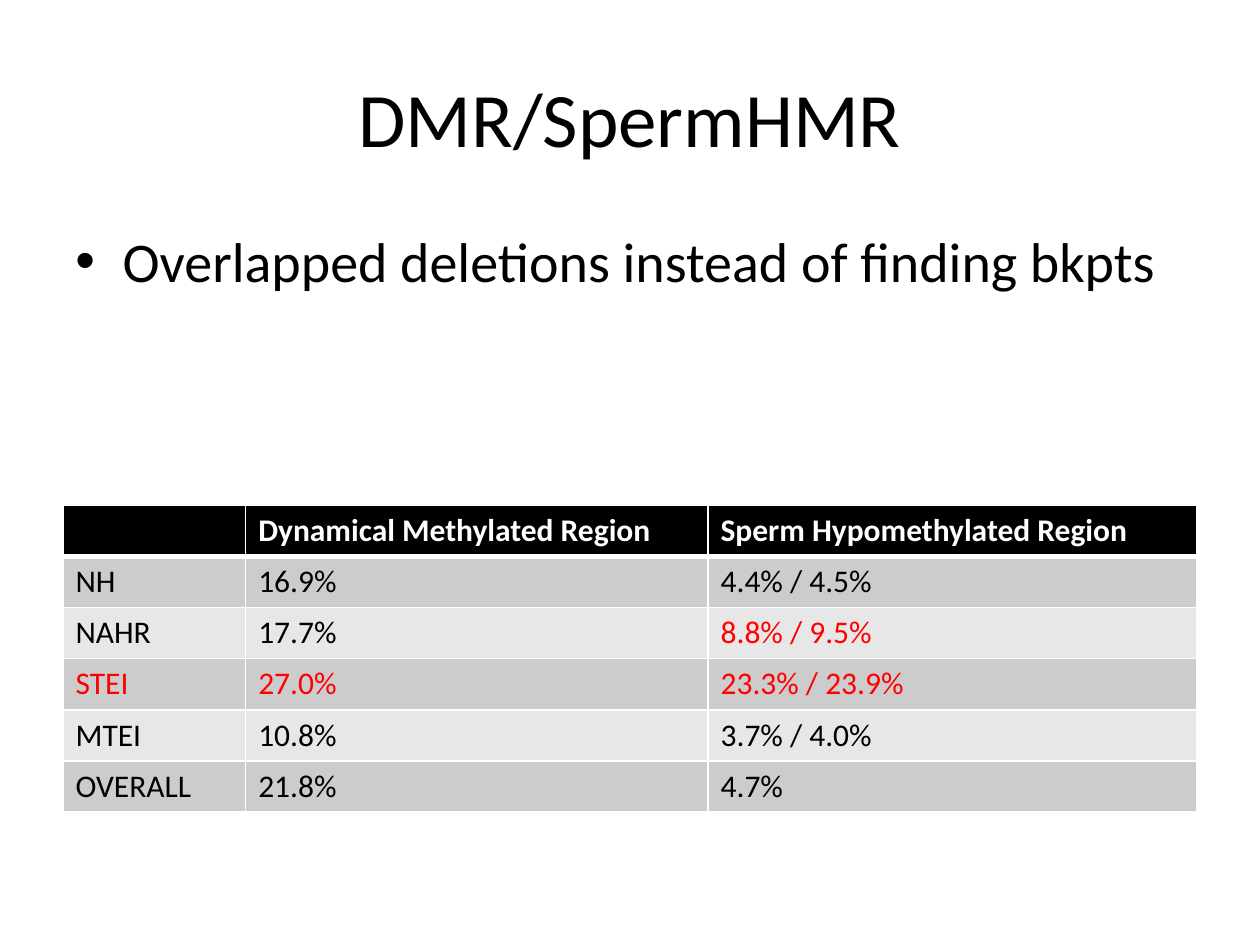
from typing import NamedTuple

from lxml.etree import SubElement
from pptx import Presentation
from pptx.dml.color import RGBColor
from pptx.enum.text import MSO_ANCHOR as Anchor, PP_ALIGN as Align
from pptx.oxml.ns import qn
from pptx.util import Pt

FONT = "Calibri"
COLORS = {
    "text": "000000",
    "header": "000000",
    "inverse": "FFFFFF",
    "highlight": "FF0000",
    "band_dark": "CCCCCC",
    "band_light": "E7E7E7",
    "grid": "FFFFFF",
}
LEFT, WIDTH = 36, 648
TABLE_TOP, ROW_HEIGHT = 288.8, 29.2
COLUMN_WIDTHS = (104.4, 264.2, 279.4)
HEADINGS = ("", "Dynamical Methylated Region", "Sperm Hypomethylated Region")


class Mechanism(NamedTuple):
    name: str
    methylated: str
    hypomethylated: str
    highlighted: tuple[int, ...] = ()


MECHANISMS = (
    Mechanism("NH", "16.9%", "4.4% / 4.5%"),
    Mechanism("NAHR", "17.7%", "8.8% / 9.5%", (2,)),
    Mechanism("STEI", "27.0%", "23.3% / 23.9%", (0, 1, 2)),
    Mechanism("MTEI", "10.8%", "3.7% / 4.0%"),
    Mechanism("OVERALL", "21.8%", "4.7%"),
)


def rgb(color: str) -> RGBColor:
    return RGBColor.from_string(COLORS[color])


def style(paragraph, size: float, color: str = "text", bold: bool = False) -> None:
    font = paragraph.font
    font.name, font.size, font.bold = FONT, Pt(size), bold
    font.color.rgb = rgb(color)


def add_text(slide, top: float, height: float, text: str, size: float, anchor):
    """Add a full-width text box and return its paragraph."""
    frame = slide.shapes.add_textbox(Pt(LEFT), Pt(top), Pt(WIDTH), Pt(height)).text_frame
    frame.word_wrap = True
    frame.vertical_anchor = anchor
    paragraph = frame.paragraphs[0]
    paragraph.text = text
    style(paragraph, size)
    return paragraph


def add_bullet(paragraph, indent: float) -> None:
    properties = paragraph._p.get_or_add_pPr()
    properties.set("marL", str(Pt(indent)))
    properties.set("indent", str(-Pt(indent)))
    SubElement(properties, qn("a:buFont"), typeface="Arial")
    SubElement(properties, qn("a:buChar"), char="•")


def set_borders(cell, top: float = 1, bottom: float = 1) -> None:
    """Draw all four grid lines; must run before the cell's fill is set."""
    properties = cell._tc.get_or_add_tcPr()
    for side, width in (("L", 1), ("R", 1), ("T", top), ("B", bottom)):
        line = SubElement(properties, qn(f"a:ln{side}"), w=str(Pt(width)))
        SubElement(SubElement(line, qn("a:solidFill")), qn("a:srgbClr"), val=COLORS["grid"])


def fill_cell(cell, text: str, fill: str, color: str, bold: bool = False) -> None:
    cell.fill.solid()
    cell.fill.fore_color.rgb = rgb(fill)
    cell.text = text
    style(cell.text_frame.paragraphs[0], 18, color, bold)


def add_overlap_table(slide) -> None:
    row_count = len(MECHANISMS) + 1
    table = slide.shapes.add_table(
        row_count, len(HEADINGS), Pt(LEFT), Pt(TABLE_TOP), Pt(WIDTH), Pt(ROW_HEIGHT * row_count)
    ).table
    for column, width in zip(table.columns, COLUMN_WIDTHS):
        column.width = Pt(width)
    for row in table.rows:
        row.height = Pt(ROW_HEIGHT)

    for col, heading in enumerate(HEADINGS):
        cell = table.cell(0, col)
        set_borders(cell, bottom=3)
        fill_cell(cell, heading, "header", "inverse", bold=True)
    for row, mechanism in enumerate(MECHANISMS, start=1):
        band = "band_dark" if row % 2 else "band_light"
        for col, value in enumerate(mechanism[:3]):
            cell = table.cell(row, col)
            set_borders(cell, top=3 if row == 1 else 1)
            color = "highlight" if col in mechanism.highlighted else "text"
            fill_cell(cell, value, band, color)


def main() -> None:
    presentation = Presentation()
    presentation.slide_width, presentation.slide_height = Pt(720), Pt(540)
    slide = presentation.slides.add_slide(presentation.slide_layouts[6])

    title = add_text(slide, 21.6, 90, "DMR/SpermHMR", 44, Anchor.MIDDLE)
    title.alignment = Align.CENTER
    add_overlap_table(slide)
    method = add_text(
        slide, 126, 356.4, "Overlapped deletions instead of finding bkpts", 32, Anchor.TOP
    )
    method.space_before = Pt(6.4)
    add_bullet(method, 27)

    presentation.save("out.pptx")


if __name__ == "__main__":
    main()
